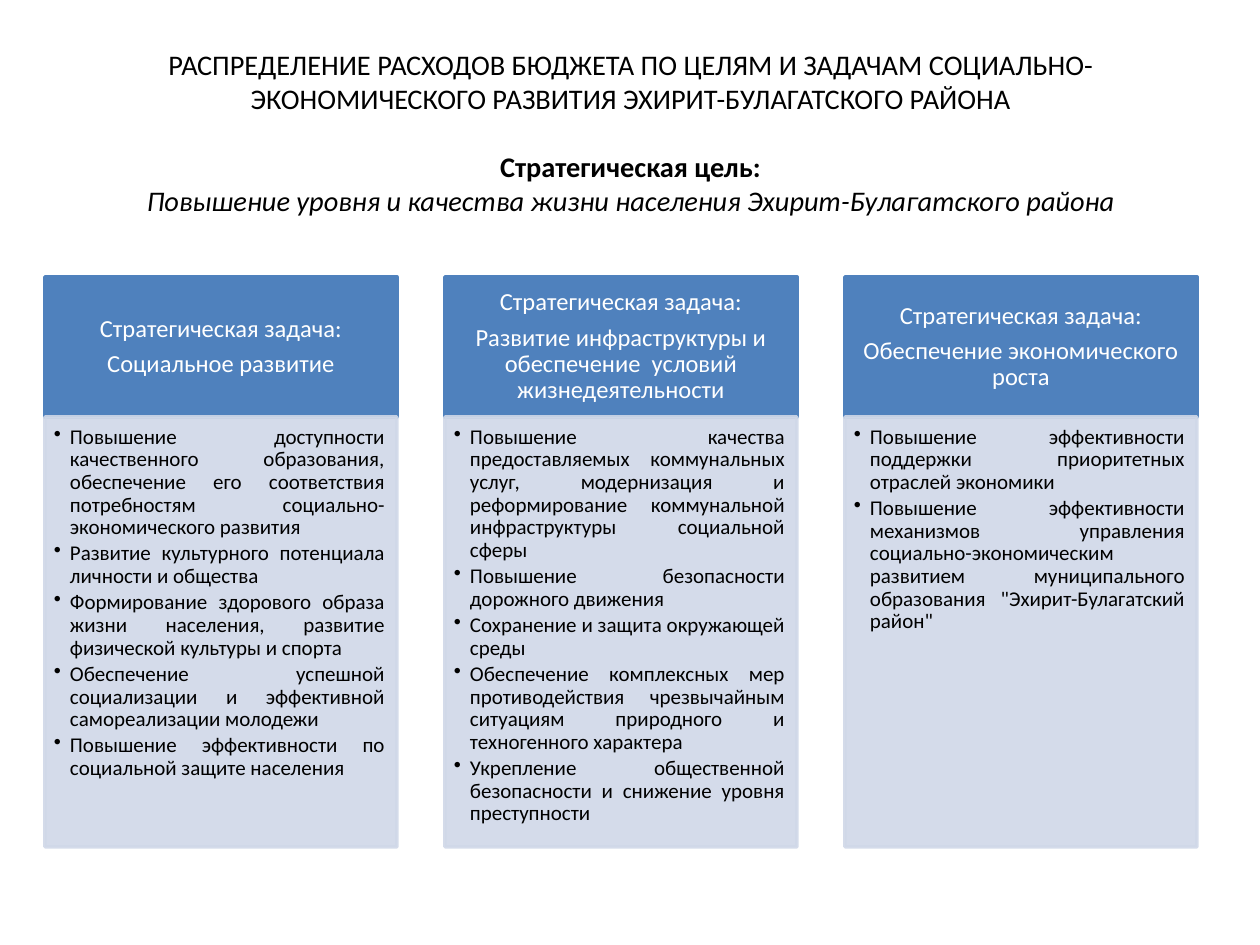
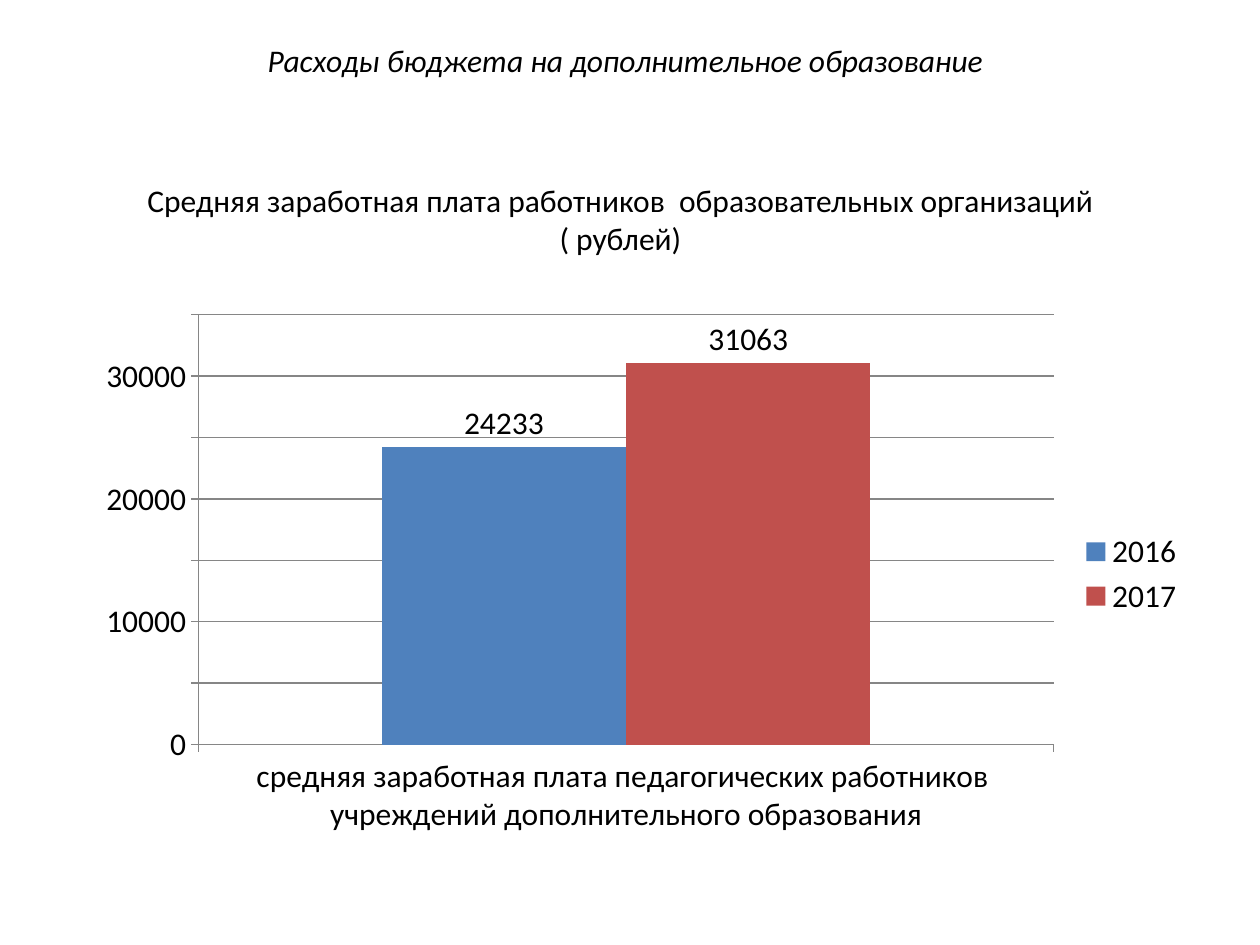
"""Build two slides on the district budget: goals by task, and teachers' pay."""
from lxml import etree
from pptx import Presentation, util as u
from pptx.chart.data import CategoryChartData
from pptx.dml.color import RGBColor
from pptx.enum import chart as ch, shapes, text
from pptx.oxml.ns import qn

PX = 914400 / 126
FONT = "Calibri"
COLORS = {"ink": "000000", "white": "FFFFFF", "blue": "4F81BD",
          "red": "C0504D", "pale": "D0D8E8", "grid": "868686"}
CENTER, JUSTIFY = text.PP_ALIGN.CENTER, text.PP_ALIGN.JUSTIFY
TOP, MIDDLE = text.MSO_ANCHOR.TOP, text.MSO_ANCHOR.MIDDLE

HEAD = {"top": 277, "height": 140, "fill": "blue", "alpha": 100,
        "frame": {"anchor": MIDDLE, "margins": (14, 8, 14, 8)},
        "para": {"alignment": CENTER, "line_spacing": 0.9, "space_after": u.Pt(5)},
        "font": {"size": 14, "color": "white"}, "bullet": False}
BODY = {"top": 417, "height": 430, "fill": "pale", "alpha": 90,
        "frame": {"anchor": TOP, "margins": (9, 9, 12, 13)},
        "para": {"alignment": JUSTIFY, "line_spacing": 0.9, "space_after": u.Pt(2)},
        "font": {"size": 12, "color": "ink"}, "bullet": True}
COLUMN_LEFT, COLUMN_STEP, COLUMN_WIDTH = 45, 400, 352

TASKS = [
    ("Социальное развитие", [
        "Повышение доступности качественного образования, обеспечение его "
        "соответствия потребностям социально-экономического развития",
        "Развитие культурного потенциала личности и общества",
        "Формирование здорового образа жизни населения, развитие физической "
        "культуры и спорта",
        "Обеспечение успешной социализации и эффективной самореализации молодежи",
        "Повышение эффективности по социальной защите населения"]),
    ("Развитие инфраструктуры и обеспечение  условий жизнедеятельности", [
        "Повышение качества предоставляемых коммунальных услуг, модернизация и "
        "реформирование коммунальной инфраструктуры социальной сферы",
        "Повышение безопасности дорожного движения",
        "Сохранение и защита окружающей среды",
        "Обеспечение комплексных мер противодействия чрезвычайным ситуациям "
        "природного и техногенного характера",
        "Укрепление общественной безопасности и снижение уровня преступности"]),
    ("Обеспечение экономического роста", [
        "Повышение эффективности поддержки приоритетных отраслей экономики",
        "Повышение эффективности механизмов управления социально-экономическим "
        "развитием муниципального образования \"Эхирит-Булагатский район\""]),
]


def px(*values):
    """Turn pixel lengths into a list of EMU."""
    return [u.Emu(round(v * PX)) for v in values]


def rgb(name):
    """Return the named colour."""
    return RGBColor.from_string(COLORS[name])


def set_attrs(obj, values):
    """Set each attribute of an object from a dict."""
    for name, value in values.items():
        setattr(obj, name, value)


def style_font(font, size, color="ink", **flags):
    """Give a font the shared face, a size, a colour and any flags."""
    set_attrs(font, {"name": FONT, "size": u.Pt(size), **flags})
    font.color.rgb = rgb(color)


def style_frame(tf, anchor=TOP, margins=(13, 6, 13, 6)):
    """Set wrapping, anchor and insets of a text frame."""
    set_attrs(tf, {"word_wrap": True, "auto_size": text.MSO_AUTO_SIZE.NONE,
                   "vertical_anchor": anchor})
    sides = ("margin_left", "margin_top", "margin_right", "margin_bottom")
    set_attrs(tf, dict(zip(sides, px(*margins))))


def add_bullet(p):
    """Give a paragraph a hanging round bullet."""
    pPr = p._p.get_or_add_pPr()
    indent, = px(16)
    pPr.set("marL", str(indent))
    pPr.set("indent", str(-indent))
    etree.SubElement(pPr, qn("a:buChar")).set("char", "•")


def write(tf, lines, para, bullet=False):
    """Fill a frame with (text, font values) lines, one paragraph each."""
    for i, (line, font) in enumerate(lines):
        p = tf.paragraphs[0] if i == 0 else tf.add_paragraph()
        if bullet:
            add_bullet(p)
        set_attrs(p, para)
        r = p.add_run()
        r.text = line
        style_font(r.font, **font)
    return tf.paragraphs


def add_titled_slide(prs, box, lines, **frame):
    """Add a title-only slide with its title placed and written."""
    s = prs.slides.add_slide(prs.slide_layouts[5])
    title = s.shapes.title
    set_attrs(title, dict(zip(("left", "top", "width", "height"), px(*box))))
    style_frame(title.text_frame, **frame)
    return s, write(title.text_frame, lines, {"alignment": CENTER})


def set_alpha(color_format, percent):
    """Make a solid colour partly transparent."""
    if percent < 100:
        clr = color_format._xFill.find(qn("a:srgbClr"))
        etree.SubElement(clr, qn("a:alpha")).set("val", str(percent * 1000))


def add_panel(s, left, lines, look):
    """Add one filled rectangle of a task column."""
    sp = s.shapes.add_shape(shapes.MSO_SHAPE.RECTANGLE,
                            *px(left, look["top"], COLUMN_WIDTH, look["height"]))
    sp.shadow.inherit = False
    sp.line.width = u.Pt(2)
    sp.fill.solid()
    for color in (sp.fill.fore_color, sp.line.color):
        color.rgb = rgb(look["fill"])
        set_alpha(color, look["alpha"])
    style_frame(sp.text_frame, **look["frame"])
    write(sp.text_frame, [(line, look["font"]) for line in lines],
          look["para"], look["bullet"])


def add_pay_chart(s):
    """Add the column chart of average pay by year."""
    data = CategoryChartData()
    data.categories = ["средняя заработная плата педагогических работников  "
                       "учреждений дополнительного образования"]
    data.add_series("2016", [24233])
    data.add_series("2017", [31063])
    chart = s.shapes.add_chart(ch.XL_CHART_TYPE.COLUMN_CLUSTERED,
                               *px(84, 304, 1113, 540), data).chart
    style_font(chart.font, 18)
    set_attrs(chart, {"has_title": False, "has_legend": True})
    set_attrs(chart.legend, {"position": ch.XL_LEGEND_POSITION.RIGHT,
                             "include_in_layout": False})
    axis = chart.value_axis
    set_attrs(axis, {"minimum_scale": 0, "maximum_scale": 35000,
                     "major_unit": 5000, "has_major_gridlines": True})
    for line in (axis.format.line, axis.major_gridlines.format.line,
                 chart.category_axis.format.line):
        line.color.rgb = rgb("grid")
        line.width = u.Pt(0.75)
    plot = chart.plots[0]
    set_attrs(plot, {"gap_width": 150, "overlap": 0,
                     "vary_by_categories": False, "has_data_labels": True})
    set_attrs(plot.data_labels, {"show_value": True,
                                 "position": ch.XL_LABEL_POSITION.OUTSIDE_END})
    for series, color in zip(plot.series, ("blue", "red")):
        series.format.fill.solid()
        series.format.fill.fore_color.rgb = rgb(color)


def add_goals_slide(prs):
    """Add the slide of strategic tasks in three columns."""
    s, paragraphs = add_titled_slide(prs, (64, 28, 1133, 208), [
        ("РАСПРЕДЕЛЕНИЕ РАСХОДОВ БЮДЖЕТА ПО ЦЕЛЯМ И ЗАДАЧАМ "
         "СОЦИАЛЬНО-ЭКОНОМИЧЕСКОГО РАЗВИТИЯ ЭХИРИТ-БУЛАГАТСКОГО РАЙОНА",
         {"size": 16.2}),
        ("Стратегическая цель:", {"size": 16.2, "bold": True}),
        ("Повышение уровня и качества жизни населения Эхирит-Булагатского района",
         {"size": 16.2, "italic": True})], anchor=MIDDLE)
    paragraphs[1].space_before = u.Pt(19.5)
    for i, (task, goals) in enumerate(TASKS):
        left = COLUMN_LEFT + i * COLUMN_STEP
        add_panel(s, left, ["Стратегическая задача:", task], HEAD)
        add_panel(s, left, goals, BODY)


def add_pay_slide(prs):
    """Add the slide of average pay with its heading and chart."""
    s, _ = add_titled_slide(prs, (54, 38, 1143, 77), [
        ("Расходы бюджета на дополнительное образование",
         {"size": 18, "italic": True})], margins=(13, 3, 13, 3))
    add_pay_chart(s)
    tf = s.shapes.add_textbox(*px(134, 175, 973, 89)).text_frame
    style_frame(tf)
    write(tf, [("Средняя заработная плата работников  образовательных "
                "организаций ( рублей)", {"size": 18})], {"alignment": CENTER})


def main():
    """Build and save the presentation."""
    prs = Presentation()
    prs.slide_width, prs.slide_height = px(1260, 945)
    add_goals_slide(prs)
    add_pay_slide(prs)
    prs.save("out.pptx")


if __name__ == "__main__":
    main()
